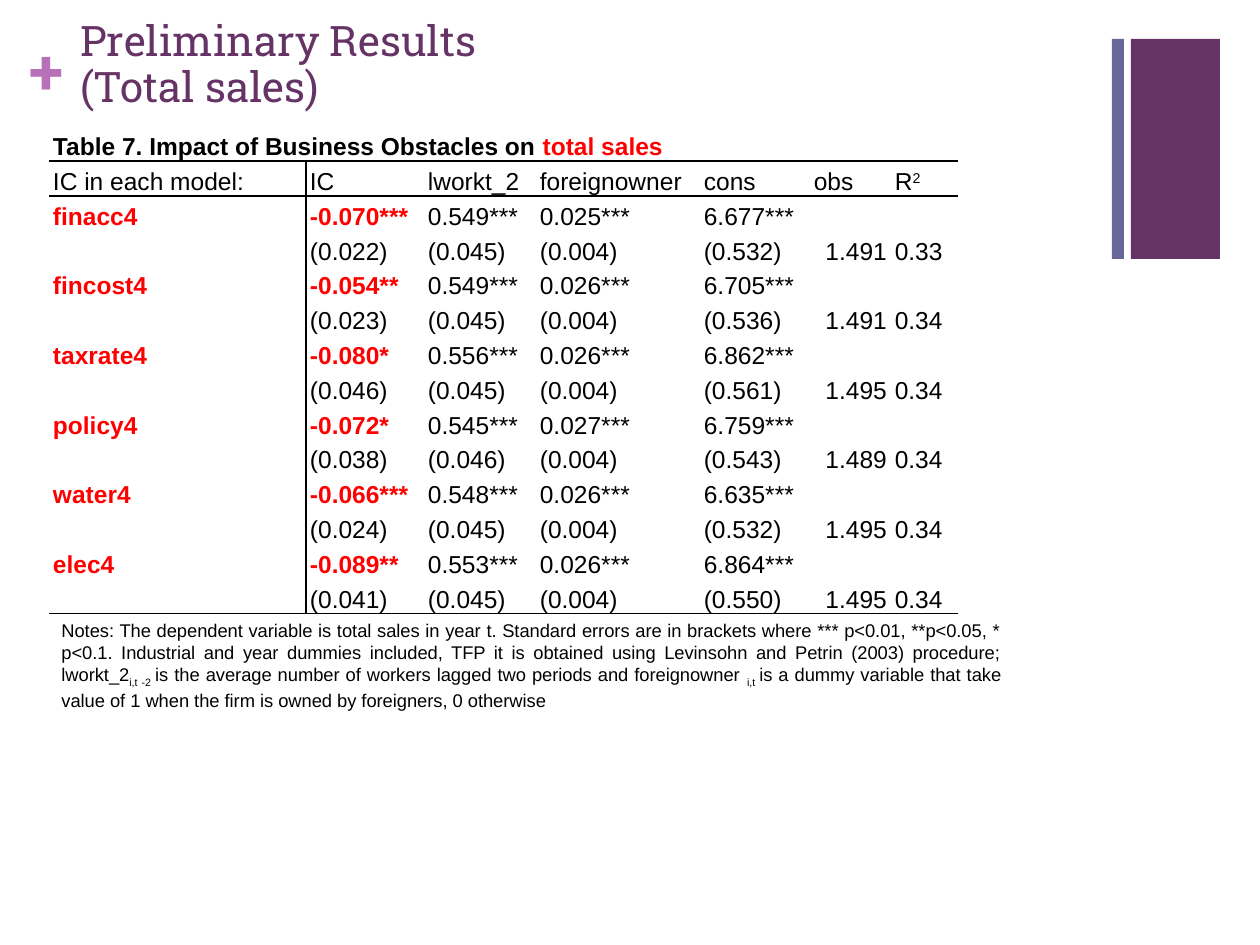
import pptx
import pptx.util
import pptx.dml.color
import pptx.enum.shapes
import pptx.enum.text
import pptx.oxml.ns
from lxml import etree

ALIGN = pptx.enum.text.PP_ALIGN
ANCHOR = pptx.enum.text.MSO_ANCHOR
PURPLE, SLATE, ORCHID = "663366", "666699", "B870B8"
BLACK, RED = "000000", "FF0000"

COLUMNS = [257, 118, 112, 164, 110, 81, 67]
CAPTION = [("Table 7. Impact of Business Obstacles on ", {}), ("total sales", {"color": RED})]
HEADER = ["IC in each model:", "IC", "lworkt_2", "foreignowner", "cons", "obs",
          [("R", {}), ("2", {"baseline": 30})]]
MODELS = [
    ("finacc4", "-0.070*** 0.549*** 0.025*** 6.677***", "(0.022) (0.045) (0.004) (0.532) 1.491 0.33"),
    ("fincost4", "-0.054** 0.549*** 0.026*** 6.705***", "(0.023) (0.045) (0.004) (0.536) 1.491 0.34"),
    ("taxrate4", "-0.080* 0.556*** 0.026*** 6.862***", "(0.046) (0.045) (0.004) (0.561) 1.495 0.34"),
    ("policy4", "-0.072* 0.545*** 0.027*** 6.759***", "(0.038) (0.046) (0.004) (0.543) 1.489 0.34"),
    ("water4", "-0.066*** 0.548*** 0.026*** 6.635***", "(0.024) (0.045) (0.004) (0.532) 1.495 0.34"),
    ("elec4", "-0.089** 0.553*** 0.026*** 6.864***", "(0.041) (0.045) (0.004) (0.550) 1.495 0.34"),
]
NOTES = [
    ("Notes: The dependent variable is total sales in year t. Standard errors are in brackets "
     "where *** p<0.01, **p<0.05, * p<0.1. Industrial and year dummies included, TFP it is "
     "obtained using Levinsohn and Petrin (2003) procedure; lworkt_2", {}),
    ("i,t -2 ", {"baseline": -30}),
    ("is the average number of workers lagged two periods and foreignowner ", {}),
    ("i,t ", {"baseline": -30}),
    ("is a dummy variable that take value of 1 when the firm is owned by foreigners, 0 otherwise", {}),
]
RULES = {1: 1.5, 2: 1.5, 14: 1}
DIVIDERS = {1: 1}


def px(n):
    return pptx.util.Emu(round(n * 914400 / 126))


def rgb(value):
    return pptx.dml.color.RGBColor.from_string(value)


def write(p, text, align=ALIGN.LEFT, spacing=None, **fmt):
    p.alignment = align
    if spacing:
        p.line_spacing = spacing
    for part, extra in [(text, {})] if isinstance(text, str) else text:
        style = {"font": "Arial", "size": 14, "color": BLACK, "bold": False, "baseline": 0, **fmt, **extra}
        r = p.add_run()
        r.text = part
        r.font.name = style["font"]
        r.font.size = pptx.util.Pt(style["size"])
        r.font.bold = style["bold"]
        r.font.color.rgb = rgb(style["color"])
        if style["baseline"]:
            r._r.get_or_add_rPr().set("baseline", str(style["baseline"] * 1000))


def draw_border(cell, side, width):
    tag = pptx.oxml.ns.qn
    ln = etree.SubElement(cell._tc.get_or_add_tcPr(), tag("a:ln" + side))
    if width:
        ln.set("w", str(pptx.util.Pt(width)))
        fill = etree.SubElement(ln, tag("a:solidFill"))
        etree.SubElement(fill, tag("a:srgbClr"), val=BLACK)
    else:
        etree.SubElement(ln, tag("a:noFill"))


class ResultsSlide:
    """Draws styled elements on the current slide."""

    def __init__(self, slide):
        self.s = slide
        self.heading = "Roboto Slab"
        self.row_spacing = 1.15

    def bar(self, x, y, w, h, color):
        sp = self.s.shapes.add_shape(pptx.enum.shapes.MSO_SHAPE.RECTANGLE, px(x), px(y), px(w), px(h))
        sp.shadow.inherit = False
        sp.fill.solid()
        sp.fill.fore_color.rgb = rgb(color)
        sp.line.fill.background()

    def text(self, x, y, w, h, text, anchor=ANCHOR.TOP, inset=None, **fmt):
        tf = self.s.shapes.add_textbox(px(x), px(y), px(w), px(h)).text_frame
        tf.word_wrap = True
        tf.vertical_anchor = anchor
        if inset is not None:
            tf.margin_left = tf.margin_right = tf.margin_top = tf.margin_bottom = px(inset)
        write(tf.paragraphs[0], text, **fmt)

    def cell(self, cell, row, col, text, **fmt):
        cell.vertical_anchor = ANCHOR.BOTTOM
        cell.margin_left = cell.margin_right = px(4)
        cell.margin_top = cell.margin_bottom = 0
        dividers = DIVIDERS if row else {}
        draw_border(cell, "L", dividers.get(col))
        draw_border(cell, "R", dividers.get(col + 1))
        draw_border(cell, "T", RULES.get(row))
        draw_border(cell, "B", RULES.get(row + 1))
        cell.fill.background()
        p = cell.text_frame.paragraphs[0]
        if text:
            write(p, text, **{"spacing": self.row_spacing, **fmt})
        else:
            etree.SubElement(p._p, pptx.oxml.ns.qn("a:endParaRPr"), sz="1400")

    def table(self, x, y, h, rows):
        shape = self.s.shapes.add_table(len(rows), len(COLUMNS), px(x), px(y), px(sum(COLUMNS)), px(h))
        table = shape.table
        table.first_row = table.horz_banding = False
        for column, width in zip(table.columns, COLUMNS):
            column.width = px(width)
        for i, row in enumerate(rows):
            table.rows[i].height = px(h / len(rows))
            for j, text in enumerate(row):
                fmt = {}
                if i == 0:
                    fmt = {"bold": True}
                elif i == 1 and j == 0:
                    fmt = {"align": ALIGN.JUSTIFY, "spacing": None}
                elif i > 1 and i % 2 == 0 and j < 2:
                    fmt = {"bold": True, "color": RED}
                elif i > 1 and j == 5:
                    fmt = {"align": ALIGN.RIGHT}
                self.cell(table.cell(i, j), i, j, text, **fmt)
        table.cell(0, 0).merge(table.cell(0, len(COLUMNS) - 1))


def main():
    prs = pptx.Presentation()
    prs.slide_width, prs.slide_height = px(1260), px(945)
    s = ResultsSlide(prs.slides.add_slide(prs.slide_layouts[6]))
    s.bar(1131, 39, 89, 220, PURPLE)
    s.text(30, 32, 37, 77, "+", inset=0, font=s.heading, size=36, color=ORCHID, bold=True)
    s.bar(1112, 39, 12, 220, SLATE)
    s.text(68, 13, 465, 58, "Preliminary Results (Total sales)", font=s.heading, size=24,
           color=PURPLE, spacing=0.92)
    rows = [[CAPTION] + [""] * 6, HEADER]
    for name, estimates, errors in MODELS:
        rows.append([name] + estimates.split() + ["", ""])
        rows.append([""] + errors.split())
    s.table(49, 126, 488, rows)
    s.text(49, 614, 965, 102, NOTES, anchor=ANCHOR.MIDDLE, align=ALIGN.JUSTIFY, size=10.5)
    prs.save("out.pptx")


if __name__ == "__main__":
    main()
